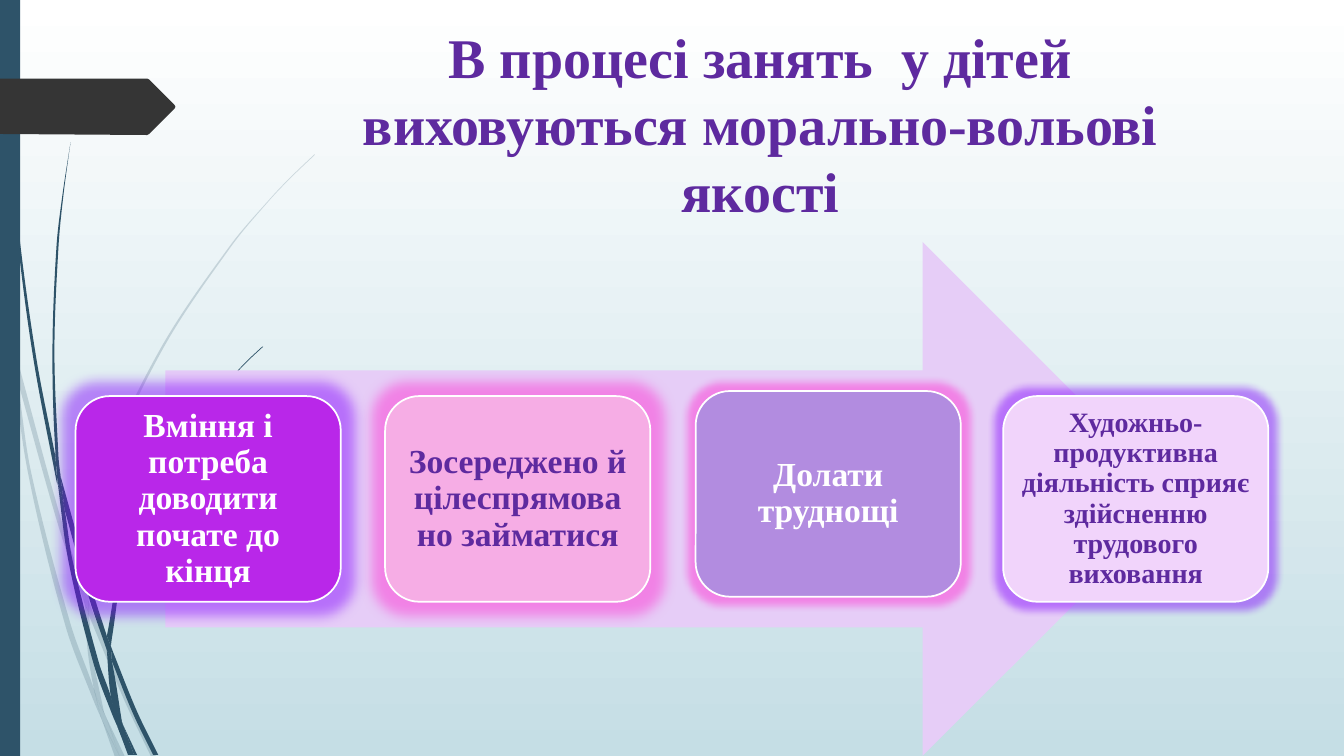
from math import dist

from lxml import etree
from pptx import Presentation
from pptx import util as u
from pptx.dml.color import RGBColor
from pptx.enum import shapes, text
from pptx.oxml import ns

W, H = 13.33, 7.5  # slide grid: columns and rows of one inch

THEME = {
    "font": "Times New Roman",
    "sky": ("FFFFFF", "C5DEE5"),
    "slate": "2E5369",
    "charcoal": "353535",
    "violet": "5E2A9F",
    "white": "FFFFFF",
    "arrow": "E6CDF7",
    "glow_violet": "7F00FF",
    "glow_pink": "FF28D1",
    "title": 40,
    "body": 24,
    "small": 20,
}

# Each blade of grass: its two edges, as (column, row) knots
PALE_BLADES = [
    ([(.11, 3.5), (.09, 3.22), (0, 2.82)], [(0, 2.99), (.1, 3.44), (.11, 3.5)]),
    ([(.17, 3.76), (.58, 5.22), (.84, 5.99)], [(.85, 5.86), (.62, 5.2), (.14, 3.45)]),
    ([(.88, 6.1), (1.23, 6.94), (1.5, 7.51)],
     [(1.55, 7.51), (1.27, 6.92), (.92, 6.07), (.88, 5.96)]),
    ([(1.05, 7.11), (1.19, 7.51)], [(1.24, 7.51), (1.05, 7.11)]),
    ([(.11, 3.5), (.28, 4.7), (.65, 6.21), (.92, 6.93), (1.01, 7.14)],
     [(.99, 7.07), (.93, 6.83), (.7, 6.19), (.31, 4.69), (.17, 3.76), (.11, 3.5)]),
    ([(.84, 5.99), (.87, 6.46), (.93, 6.83), (.96, 6.92), (1.05, 7.11)],
     [(1.03, 7.06), (.91, 6.46), (.88, 6.08), (.84, 5.99)]),
    ([(3.12, 1.53), (2.89, 1.75), (2.68, 1.97), (2.28, 2.44), (1.58, 3.48),
      (1.07, 4.61), (.85, 5.84)],
     [(.88, 5.96), (.88, 5.84), (1.1, 4.62), (1.6, 3.49), (2.29, 2.45),
      (2.68, 1.98), (2.9, 1.75), (3.12, 1.54)]),
    ([(1.01, 7.14), (1.14, 7.51)], [(1.19, 7.51), (1.01, 7.14)]),
    ([(.88, 6.1), (.88, 5.96), (.85, 5.86)], [(.84, 5.99), (.88, 6.08)]),
    ([(.93, 6.83), (.99, 7.07), (1.01, 7.14), (1.19, 7.51)],
     [(1.19, 7.51), (1.05, 7.11), (.96, 6.92), (.93, 6.83)]),
]
DARK_BLADES = [
    ([(.03, 0), (.04, .48), (.07, 1.1), (.17, 2.33), (.33, 3.55), (.56, 4.77),
      (.57, 4.81)],
     [(.55, 4.53), (.36, 3.55), (.19, 2.32), (.08, 1.09), (.05, .48), (.04, 0)]),
    ([(.64, 5.05), (.88, 5.92), (1.06, 6.45)], [(1.06, 6.31), (.93, 5.9), (.6, 4.72)]),
    ([(1.11, 6.56), (1.32, 7.08), (1.52, 7.49)],
     [(1.57, 7.49), (1.36, 7.06), (1.13, 6.49), (1.1, 6.41)]),
    ([(.57, 4.77), (.68, 5.57), (.93, 6.59), (1.11, 7.08), (1.17, 7.22)],
     [(1.16, 7.17), (1.1, 6.91), (.98, 6.57), (.72, 5.56), (.64, 5.05), (.57, 4.77)]),
    ([(.7, 1.41), (.62, 1.93), (.56, 2.45), (.52, 3.49), (.55, 4.49), (.6, 4.72)],
     [(.6, 4.72), (.58, 4.53), (.54, 3.49), (.58, 2.45), (.63, 1.93), (.7, 1.41)]),
    ([(1.22, 7.19), (1.33, 7.49)], [(1.36, 7.49), (1.22, 7.19)]),
    ([(.57, 4.77), (.64, 5.05)], [(.6, 4.72), (.55, 4.49), (.55, 4.53)]),
    ([(2.6, 3.44), (2.45, 3.58), (2.31, 3.73), (2.04, 4.05), (1.56, 4.74),
      (1.22, 5.51), (1.06, 6.31)],
     [(1.1, 6.41), (1.11, 6.33), (1.25, 5.52), (1.58, 4.76), (2.05, 4.06),
      (2.31, 3.74), (2.45, 3.59), (2.61, 3.44)]),
    ([(1.17, 7.22), (1.27, 7.49)], [(1.31, 7.49), (1.17, 7.22)]),
    ([(1.06, 6.45), (1.1, 6.91), (1.16, 7.06), (1.22, 7.19)],
     [(1.21, 7.16), (1.11, 6.56), (1.06, 6.45)]),
    ([(1.06, 6.45), (1.11, 6.56)], [(1.1, 6.41), (1.06, 6.31)]),
    ([(1.1, 6.91), (1.17, 7.22), (1.3, 7.49)], [(1.33, 7.49), (1.22, 7.19), (1.1, 6.91)]),
]
PENNANT = [(0, .78), (1.46, .78), (1.48, .79), (1.73, 1.04), (1.74, 1.06),
           (1.73, 1.08), (1.48, 1.33), (1.46, 1.34), (0, 1.33)]

# Cards: wording, fill, text colour, size, inset, glow colour, glow radius, place
CARDS = [
    ("Вміння і потреба доводити почате до кінця",
     "B927E9", "white", "body", .1, "glow_violet", 18, (.75, 3.93)),
    ("Зосереджено й цілеспрямовано займатися",
     "F6ADE5", "violet", "body", .1, "glow_pink", 18, (3.82, 3.93)),
    ("Долати труднощі",
     "B28CE0", "white", "body", .1, "glow_pink", 11, (6.9, 3.88)),
    ("Художньо-продуктивна діяльність сприяє здійсненню трудового виховання",
     "F1D4FB", "violet", "small", .08, "glow_violet", 11, (9.95, 3.93)),
]
CARD_SIZE = (2.63, 2.04)


def rgb(name):
    return RGBColor.from_string(THEME.get(name, name))


def assign(obj, values):
    for key, value in values.items():
        setattr(obj, key, value)


def cells(*values):
    return [u.Inches(v) for v in values]


def add(parent, tag, **attrs):
    return etree.SubElement(parent, ns.qn(tag), **{k: str(v) for k, v in attrs.items()})


def paint(sp, fill, line=None, alpha=None):
    sp.shadow.inherit = False
    sp.fill.solid()
    sp.fill.fore_color.rgb = rgb(fill)
    if alpha:
        clr = sp._element.spPr.find(ns.qn("a:solidFill"))[0]
        add(clr, "a:alpha", val=alpha * 1000)
    if line:
        sp.line.color.rgb = rgb(line)
        sp.line.width = u.Pt(1.25)
    else:
        sp.line.fill.background()


def glow(sp, color, radius):
    effects = sp._element.spPr.find(ns.qn("a:effectLst"))
    clr = add(add(effects, "a:glow", rad=u.Pt(radius)), "a:srgbClr", val=THEME[color])
    add(clr, "a:alpha", val=45000)


def preset(s, kind, at, fill, line=None):
    sp = s.shapes.add_shape(kind, *cells(*at))
    paint(sp, fill, line)
    return sp


def curves(edge):
    """Smooth cubic segments through the knots of one edge."""
    ks = [edge[0], *edge, edge[-1]]
    for a, b, c, d in zip(ks, ks[1:], ks[2:], ks[3:]):
        t, v = dist(b, c) / 3 / dist(a, c), dist(b, c) / 3 / dist(b, d)
        yield [tuple(q + (m - p) * t for p, q, m in zip(a, b, c)),
               tuple(m - (n - q) * v for q, m, n in zip(b, c, d)), c]


def outline(s, edges, fill, alpha=None):
    knots = [cells(*k) for edge in edges for k in edge]
    fb = s.shapes.build_freeform(*knots[0])
    fb.add_line_segments(knots[1:], close=True)
    sp = fb.convert_to_shape()
    track = sp._element.spPr.find(".//" + ns.qn("a:path"))
    for child in list(track):
        track.remove(child)

    def draw(tag, points):
        step = add(track, tag)
        for x, y in points:
            add(step, "a:pt", x=u.Inches(x) - sp.left, y=u.Inches(y) - sp.top)

    for i, edge in enumerate(edges):
        if i == 0 or edge[0] != edges[i - 1][-1]:
            draw("a:lnTo" if i else "a:moveTo", [edge[0]])
        for points in curves(edge) if len(edge) > 1 else []:
            draw("a:cubicBezTo", points)
    add(track, "a:close")
    paint(sp, fill, alpha=alpha)


def write(sp, words, size, color, anchor, insets, spacing=1.0):
    tf = sp.text_frame
    sides = ("margin_left", "margin_top", "margin_right", "margin_bottom")
    assign(tf, {"word_wrap": True, "vertical_anchor": anchor,
                **dict(zip(sides, cells(*insets)))})
    p = tf.paragraphs[0]
    assign(p, {"alignment": text.PP_ALIGN.CENTER, "line_spacing": spacing})
    r = p.add_run()
    r.text = words
    assign(r.font, {"name": THEME["font"], "size": u.Pt(THEME[size]), "bold": True})
    r.font.color.rgb = rgb(color)


def backdrop(s):
    fill = s.background.fill
    fill.gradient()
    fill.gradient_angle = 270
    for stop, color, pos in zip(fill.gradient_stops, THEME["sky"], (0, 1)):
        stop.color.rgb = rgb(color)
        stop.position = pos


def card(s, words, fill, color, size, inset, halo, radius, place):
    sp = preset(s, shapes.MSO_SHAPE.ROUNDED_RECTANGLE, place + CARD_SIZE, fill, "white")
    glow(sp, halo, radius)
    write(sp, words, size, color, text.MSO_ANCHOR.MIDDLE, [inset] * 4, .9)


def main():
    prs = Presentation()
    assign(prs, {"slide_width": u.Inches(W), "slide_height": u.Inches(H)})
    s = prs.slides.add_slide(prs.slide_layouts[6])
    # Backdrop, grass, side band and pennant
    backdrop(s)
    for blades, alpha in ((PALE_BLADES, 20), (DARK_BLADES, None)):
        for edges in blades:
            outline(s, edges, "slate", alpha)
    preset(s, shapes.MSO_SHAPE.RECTANGLE, (0, 0, .2, H), "slate")
    outline(s, [[corner] for corner in PENNANT], "charcoal")
    # Title
    title = s.shapes.add_textbox(*cells(2.88, .17, 9.32, 2.23))
    write(title, "В процесі занять  у дітей виховуються морально-вольові якості",
          "title", "violet", text.MSO_ANCHOR.TOP, (.1, .05, .1, .05))
    # Arrow and its four cards
    preset(s, shapes.MSO_SHAPE.RIGHT_ARROW, (1.64, 2.4, 10.06, 5.1), "arrow")
    for row in CARDS:
        card(s, *row)
    prs.save("out.pptx")


if __name__ == "__main__":
    main()
